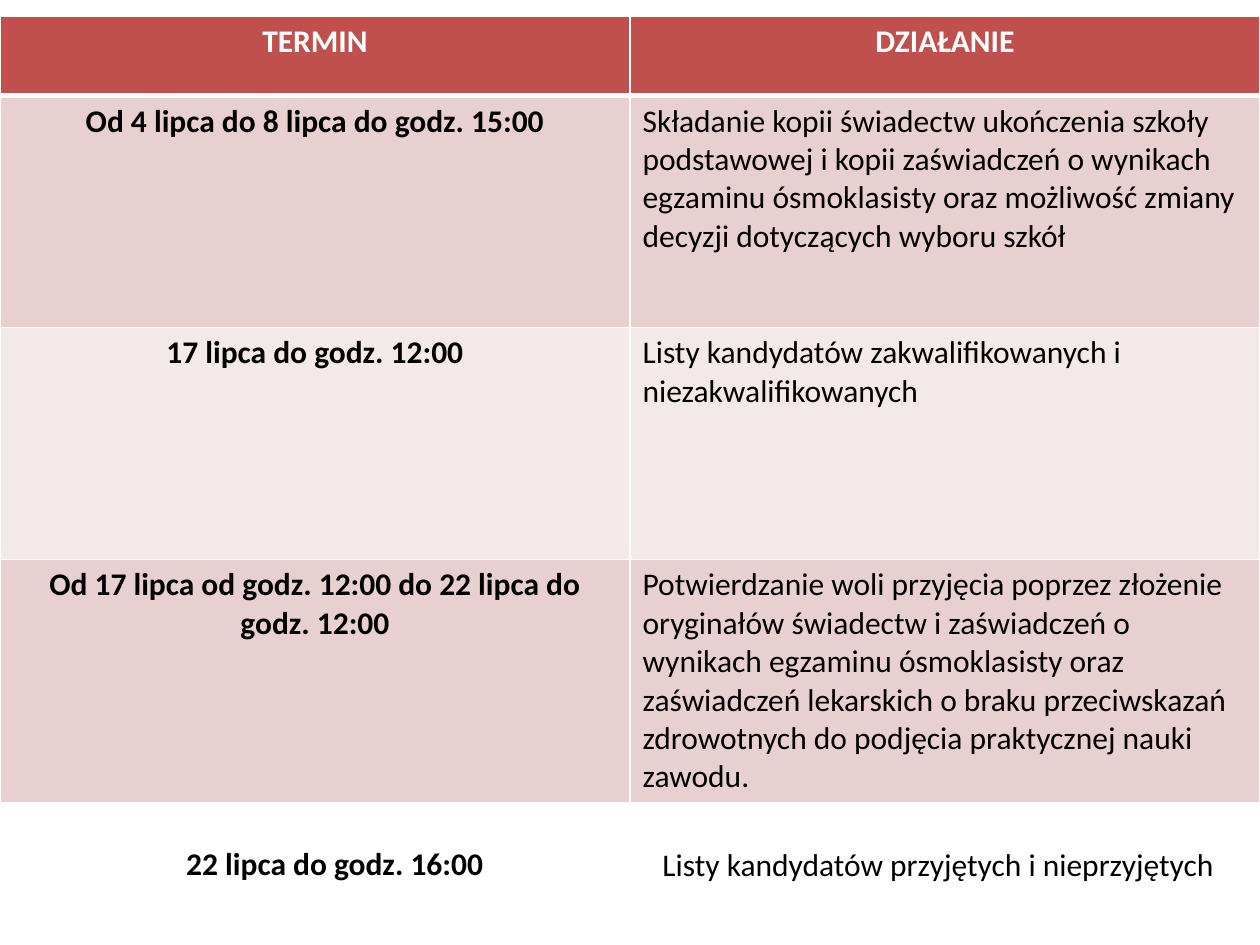
from dataclasses import dataclass

from lxml import etree
from pptx import Presentation
from pptx.dml.color import RGBColor
from pptx.enum.text import MSO_AUTO_SIZE, PP_ALIGN
from pptx.oxml.ns import qn
from pptx.util import Inches, Pt

CENTER, LEFT = PP_ALIGN.CENTER, PP_ALIGN.LEFT
FIT_SHAPE = MSO_AUTO_SIZE.SHAPE_TO_FIT_TEXT
BLANK_LAYOUT = 6


@dataclass(frozen=True)
class Theme:
    font: str = "Calibri"
    size: int = 18
    text: str = "000000"
    header_text: str = "FFFFFF"
    header_fill: str = "C0504D"
    band_fills: tuple = ("E8D0D0", "F4E9E9")
    border: str = "FFFFFF"
    thin: int = 1
    thick: int = 3


theme = Theme()


def format_paragraph(paragraph, color, bold, alignment):
    paragraph.alignment = alignment
    paragraph.font.name = theme.font
    paragraph.font.size = Pt(theme.size)
    paragraph.font.bold = bold
    paragraph.font.color.rgb = RGBColor.from_string(color)


def set_borders(cell, top, bottom):
    """Draw all four cell borders; the sides are always thin."""
    properties = cell._tc.get_or_add_tcPr()
    widths = {"a:lnL": theme.thin, "a:lnR": theme.thin, "a:lnT": top, "a:lnB": bottom}
    for position, (tag, width) in enumerate(widths.items()):
        line = etree.Element(qn(tag), w=str(Pt(width)))
        fill = etree.SubElement(line, qn("a:solidFill"))
        etree.SubElement(fill, qn("a:srgbClr"), val=theme.border)
        properties.insert(position, line)


schedule = [
    ("TERMIN", "DZIAŁANIE"),
    ("Od 4 lipca do 8 lipca do godz. 15:00",
     "Składanie kopii świadectw ukończenia szkoły podstawowej i kopii zaświadczeń "
     "o wynikach egzaminu ósmoklasisty oraz możliwość zmiany decyzji dotyczących "
     "wyboru szkół"),
    ("17 lipca do godz. 12:00",
     "Listy kandydatów zakwalifikowanych i niezakwalifikowanych"),
    ("Od 17 lipca od godz. 12:00 do 22 lipca do godz. 12:00",
     "Potwierdzanie woli przyjęcia poprzez złożenie oryginałów świadectw i "
     "zaświadczeń o wynikach egzaminu ósmoklasisty oraz zaświadczeń lekarskich "
     "o braku przeciwskazań zdrowotnych do podjęcia praktycznej nauki zawodu."),
]

presentation = Presentation()
presentation.slide_width = Inches(10)
presentation.slide_height = Inches(7.5)
slide = presentation.slides.add_slide(presentation.slide_layouts[BLANK_LAYOUT])

header_height, body_height = 0.63, 1.84
table = slide.shapes.add_table(
    len(schedule), 2, Inches(0), Inches(0.13), Inches(10),
    Inches(header_height + 3 * body_height)).table

for row_index, texts in enumerate(schedule):
    is_header = row_index == 0
    table.rows[row_index].height = Inches(header_height if is_header else body_height)
    fill = theme.header_fill if is_header else theme.band_fills[(row_index - 1) % 2]
    color = theme.header_text if is_header else theme.text
    top = theme.thick if row_index == 1 else theme.thin
    bottom = theme.thick if is_header else theme.thin
    for column_index, text in enumerate(texts):
        cell = table.cell(row_index, column_index)
        cell.text = text
        cell.fill.solid()
        cell.fill.fore_color.rgb = RGBColor.from_string(fill)
        emphasized = is_header or column_index == 0
        format_paragraph(cell.text_frame.paragraphs[0], color, emphasized,
                         CENTER if emphasized else LEFT)
        set_borders(cell, top, bottom)

final_entry = [
    ("Listy kandydatów przyjętych i nieprzyjętych", 5.16, 6.66, 4.63, False),
    ("22 lipca do godz. 16:00", 1.38, 6.65, 2.56, True),
]
for text, left, top, width, bold in final_entry:
    text_box = slide.shapes.add_textbox(
        Inches(left), Inches(top), Inches(width), Inches(0.4))
    text_frame = text_box.text_frame
    text_frame.word_wrap = False
    text_frame.auto_size = FIT_SHAPE
    text_frame.text = text
    format_paragraph(text_frame.paragraphs[0], theme.text, bold, LEFT)

presentation.save("out.pptx")
